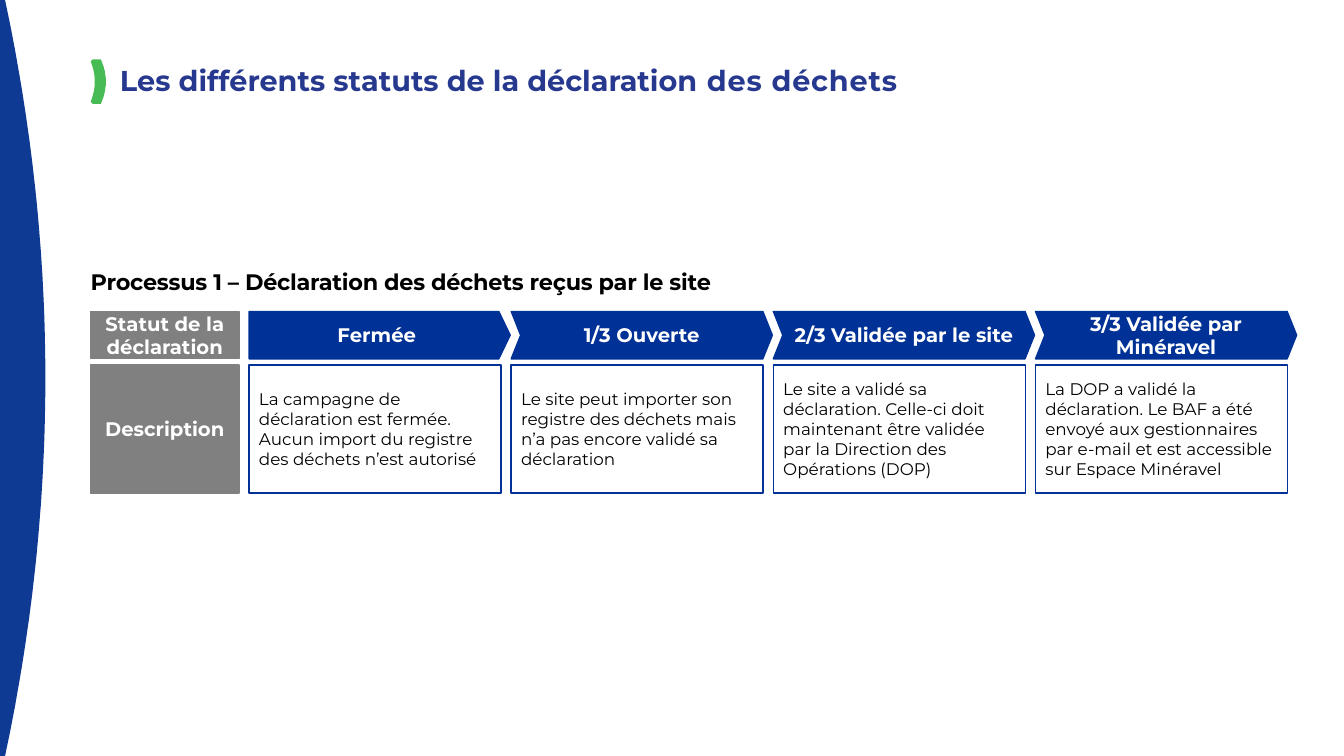
from pptx import Presentation
from pptx.dml.color import RGBColor
from pptx.enum.shapes import MSO_SHAPE
from pptx.enum.text import MSO_ANCHOR, PP_ALIGN
from pptx.util import Inches, Pt

WHITE = RGBColor(0xFF, 0xFF, 0xFF)
BLACK = RGBColor(0, 0, 0)
TITLE_BLUE = RGBColor(0x27, 0x39, 0x8F)
BAND_BLUE = RGBColor(0x0F, 0x3A, 0x93)
STEP_BLUE = RGBColor(0x00, 0x31, 0x96)
GREEN = RGBColor(0x47, 0xBC, 0x54)
GREY = RGBColor(0x80, 0x80, 0x80)
FONT = "Montserrat"
SLIDE_W, SLIDE_H = 13.33, 7.5
UNITS_PER_INCH = 1000

LABELS = ["Statut de la déclaration", "Description"]
STATUSES = [
    ("Fermée", "La campagne de déclaration est fermée. Aucun import du registre "
     "des déchets n’est autorisé"),
    ("1/3 Ouverte", "Le site peut importer son registre des déchets mais n’a pas "
     "encore validé sa déclaration"),
    ("2/3 Validée par le site", "Le site a validé sa déclaration. Celle-ci doit maintenant "
     "être validée par la Direction des Opérations (DOP)"),
    ("3/3 Validée par Minéravel", "La DOP a validé la déclaration. Le BAF a été envoyé aux "
     "gestionnaires par e-mail et est accessible sur Espace Minéravel"),
]


def style_run(r, size, color, bold=False, spacing=0):
    r.font.name = FONT
    r.font.size = Pt(size)
    r.font.bold = bold
    r.font.color.rgb = color
    if spacing:
        r.font._element.set("spc", str(round(spacing * 100)))


def add_heading(s, box, runs, size, color, anchor):
    tb = s.shapes.add_textbox(*map(Inches, box))
    tf = tb.text_frame
    tf.word_wrap = True
    tf.vertical_anchor = anchor
    tf.margin_left = tf.margin_right = tf.margin_bottom = 0
    tf.margin_top = Inches(0.02)
    p = tf.paragraphs[0]
    for text, spacing in runs:
        r = p.add_run()
        r.text = text
        style_run(r, size, color, True, spacing)


def add_cell(s, box, kind, text, size, color, fill=None, line=STEP_BLUE, adj=None):
    sp = s.shapes.add_shape(kind, *map(Inches, box))
    sp.shadow.inherit = False
    if adj is not None:
        sp.adjustments[0] = adj
    if fill is None:
        sp.fill.background()
    else:
        sp.fill.solid()
        sp.fill.fore_color.rgb = fill
    sp.line.color.rgb = line
    sp.line.width = Pt(1)
    tf = sp.text_frame
    tf.text = text
    tf.word_wrap = True
    tf.vertical_anchor = MSO_ANCHOR.MIDDLE
    p = tf.paragraphs[0]
    p.alignment = PP_ALIGN.LEFT if fill is None else PP_ALIGN.CENTER
    style_run(p.runs[0], size, color, fill is not None)


def arc(edge, apex, top, bottom, steps):
    points = []
    for i in range(steps + 1):
        t = i / steps
        points.append((edge + (apex - edge) * 4 * t * (1 - t), top + (bottom - top) * t))
    return points


def add_outline(s, points, color):
    units = [(round(x * UNITS_PER_INCH), round(y * UNITS_PER_INCH)) for x, y in points]
    builder = s.shapes.build_freeform(*units[0], scale=Inches(1) / UNITS_PER_INCH)
    builder.add_line_segments(units[1:], close=True)
    sp = builder.convert_to_shape()
    sp.shadow.inherit = False
    sp.fill.solid()
    sp.fill.fore_color.rgb = color
    sp.line.fill.background()


def add_side_band(s, width, height):
    add_outline(s, [(0, height), (0, 0)] + arc(0.05, width, 0, height, 60), BAND_BLUE)


def add_title(s, left, top, width, height):
    bottom = top + height
    outer = arc(left + 0.1, left + 0.15, top, bottom, 12)
    inner = arc(left, left + 0.04, top + 0.02, bottom - 0.02, 12)
    add_outline(s, [(left + 0.02, top)] + outer + [(left + 0.02, bottom)] + inner[::-1], GREEN)
    add_heading(s, (left + 0.29, top + 0.01, width - 0.29, 0.36),
                [("Les différents statuts de la déclaration", 0), (" des déchets", 0.6)],
                20.5, TITLE_BLUE, MSO_ANCHOR.MIDDLE)


def add_process(s, left, top, width):
    label_w, pitch, gap, overhang = 1.47, 2.6, 0.1, 0.09
    rows = [(top + 0.45, 0.47), (top + 0.98, 1.27)]
    (status_top, status_h), (desc_top, desc_h) = rows
    add_heading(s, (left, top, width, 0.28),
                [("Processus 1 – Déclaration des déchets reçus par le site", -0.14)],
                16, BLACK, MSO_ANCHOR.TOP)
    for label, (y, h) in zip(LABELS, rows):
        add_cell(s, (left, y, label_w, h), MSO_SHAPE.RECTANGLE, label, 14, WHITE, GREY, GREY)
    for i, (status, description) in enumerate(STATUSES):
        x = left + label_w + gap + i * pitch
        kind, adj = (MSO_SHAPE.CHEVRON, 0.2) if i else (MSO_SHAPE.PENTAGON, 0.24)
        add_cell(s, (x, status_top, pitch - gap + overhang, status_h), kind,
                 status, 14, WHITE, STEP_BLUE, adj=adj)
        add_cell(s, (x, desc_top, pitch - gap, desc_h), MSO_SHAPE.RECTANGLE,
                 description, 12, BLACK)


def main():
    prs = Presentation()
    prs.slide_width, prs.slide_height = Inches(SLIDE_W), Inches(SLIDE_H)
    s = prs.slides.add_slide(prs.slide_layouts[6])
    add_side_band(s, 0.45, SLIDE_H)
    add_title(s, 0.9, 0.59, 12.08, 0.44)
    add_process(s, 0.9, 2.64, 11.96)
    prs.save("out.pptx")


if __name__ == "__main__":
    main()
